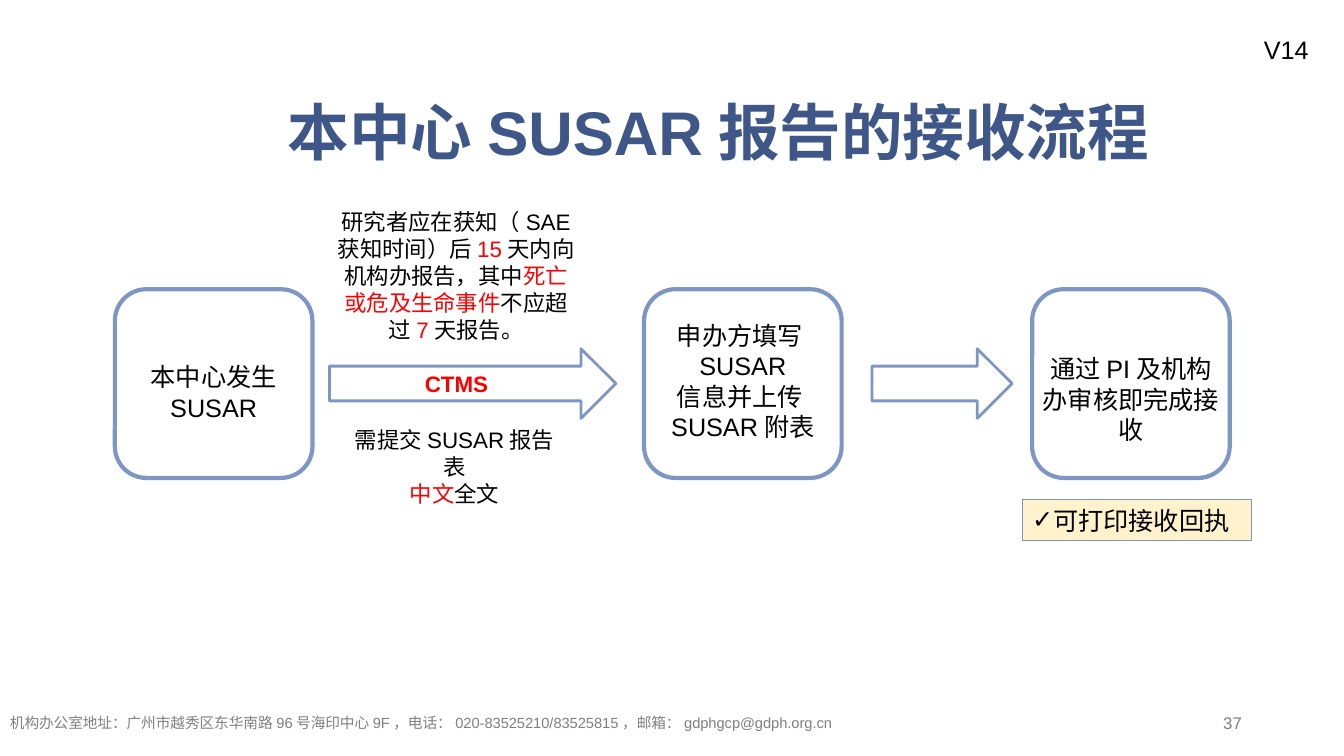
from dataclasses import dataclass

from lxml import etree
from pptx import Presentation
from pptx.dml.color import RGBColor
from pptx.enum.shapes import MSO_SHAPE as Shape
from pptx.enum.text import MSO_ANCHOR as Anchor, PP_ALIGN as Align
from pptx.oxml.ns import qn
from pptx.util import Pt


@dataclass(frozen=True)
class Theme:
    font: str = "Arial"
    text: str = "000000"
    alert: str = "FF0000"
    title: str = "3E5788"
    outline: str = "7E96C4"
    note_fill: str = "FFF2CC"
    footer: str = "808080"
    page: str = "7F7F7F"
    title_size: float = 44
    body_size: float = 18
    label_size: float = 16
    page_size: float = 12
    footer_size: float = 10.5


theme = Theme()
presentation = Presentation()
presentation.slide_width, presentation.slide_height = Pt(960), Pt(540)
slide = presentation.slides.add_slide(presentation.slide_layouts[6])


def add_text(box, lines, size=theme.body_size, color=theme.text, bold=False,
             anchor=Anchor.TOP, shape=None, **paragraph_format):
    """Write lines into a shape or a new text box; parts between * take the alert colour."""
    shape = shape or slide.shapes.add_textbox(*map(Pt, box))
    frame = shape.text_frame
    frame.word_wrap = True
    frame.vertical_anchor = anchor
    for index, line in enumerate(lines):
        paragraph = frame.add_paragraph() if index else frame.paragraphs[0]
        for name, value in paragraph_format.items():
            setattr(paragraph, name, value)
        for part, words in enumerate(line.split("*")):
            if words:
                run = paragraph.add_run()
                run.text = words
                for name, value in dict(name=theme.font, size=Pt(size), bold=bold).items():
                    setattr(run.font, name, value)
                run_color = theme.alert if part % 2 else color
                run.font.color.rgb = RGBColor.from_string(run_color)
    return shape


def add_outlined(kind, box, line_width, fill=None):
    shape = slide.shapes.add_shape(kind, *map(Pt, box))
    shape.shadow.inherit = False
    if fill:
        shape.fill.solid()
        shape.fill.fore_color.rgb = RGBColor.from_string(fill)
    else:
        shape.fill.background()
    shape.line.color.rgb = RGBColor.from_string(theme.outline)
    shape.line.width = Pt(line_width)
    return shape


# Heading and version
add_text((895.7, 20.9, 320 - 255.7, 28.8), ["V14"])
add_text((187.2, 41, 652.3, 94.3), ["本中心SUSAR报告的接收流程"], theme.title_size,
         theme.title, bold=True, anchor=Anchor.MIDDLE, alignment=Align.CENTER, line_spacing=1.2)

# Process steps: left edge, top of the text, wording
step_top, step_width, step_height = 206.6, 141.1, 134.8
steps = [
    (82.1, 254.9, ["本中心发生", "SUSAR"]),
    (460.1, 225.4, ["申办方填写SUSAR", "信息并上传SUSAR附表"]),
    (737.3, 249.1, ["通过PI及机构办审核即完成接收"]),
]
for left, text_top, lines in steps:
    add_outlined(Shape.ROUNDED_RECTANGLE, (left, step_top, step_width, step_height), 3)
    add_text((left, text_top, step_width, step_top + step_height - text_top), lines,
             alignment=Align.CENTER)

# Arrows between the steps
for left, width in [(235.4, 204.5), (622.8, 100.1)]:
    add_outlined(Shape.RIGHT_ARROW, (left, 249.1, width, 49.7), 2)

# Labels around the first arrow
add_text((223.9, 145.4, 203.8, 105.1), [
    "研究者应在获知（SAE",
    "获知时间）后*15*天内向",
    "机构办报告，其中*死亡*",
    "*或危及生命事件*不应超",
    "过*7*天报告。",
], theme.label_size, alignment=Align.CENTER)
add_text((296.4, 260.6, 90, 26.6), ["*CTMS*"], theme.label_size, bold=True)
add_text((241.9, 301, 165.6, 46.1), ["需提交SUSAR报告表", "*中文*全文"],
         theme.label_size, alignment=Align.CENTER)

# Receipt note with a tick bullet
receipt = add_outlined(Shape.RECTANGLE, (730.1, 357.1, 164.2, 29.1), 0.75, theme.note_fill)
properties = receipt.text_frame.paragraphs[0]._p.get_or_add_pPr()
properties.set("marL", "0")
properties.set("indent", "0")
etree.SubElement(properties, qn("a:buFont")).set("typeface", theme.font)
etree.SubElement(properties, qn("a:buChar")).set("char", "✓")
add_text(None, ["可打印接收回执"], shape=receipt, alignment=Align.LEFT)

# Footer
add_text((0, 495.4, 733.7, 39.6),
         ["机构办公室地址：广州市越秀区东华南路96号海印中心9F，电话：020-83525210/83525815，"
          "邮箱：gdphgcp@gdph.org.cn"],
         theme.footer_size, theme.footer, anchor=Anchor.MIDDLE, line_spacing=1.2)
add_text((678.2, 500.4, 216, 28.8), ["37"], theme.page_size, theme.page,
         anchor=Anchor.MIDDLE, alignment=Align.RIGHT, line_spacing=1.2)

presentation.save("out.pptx")
